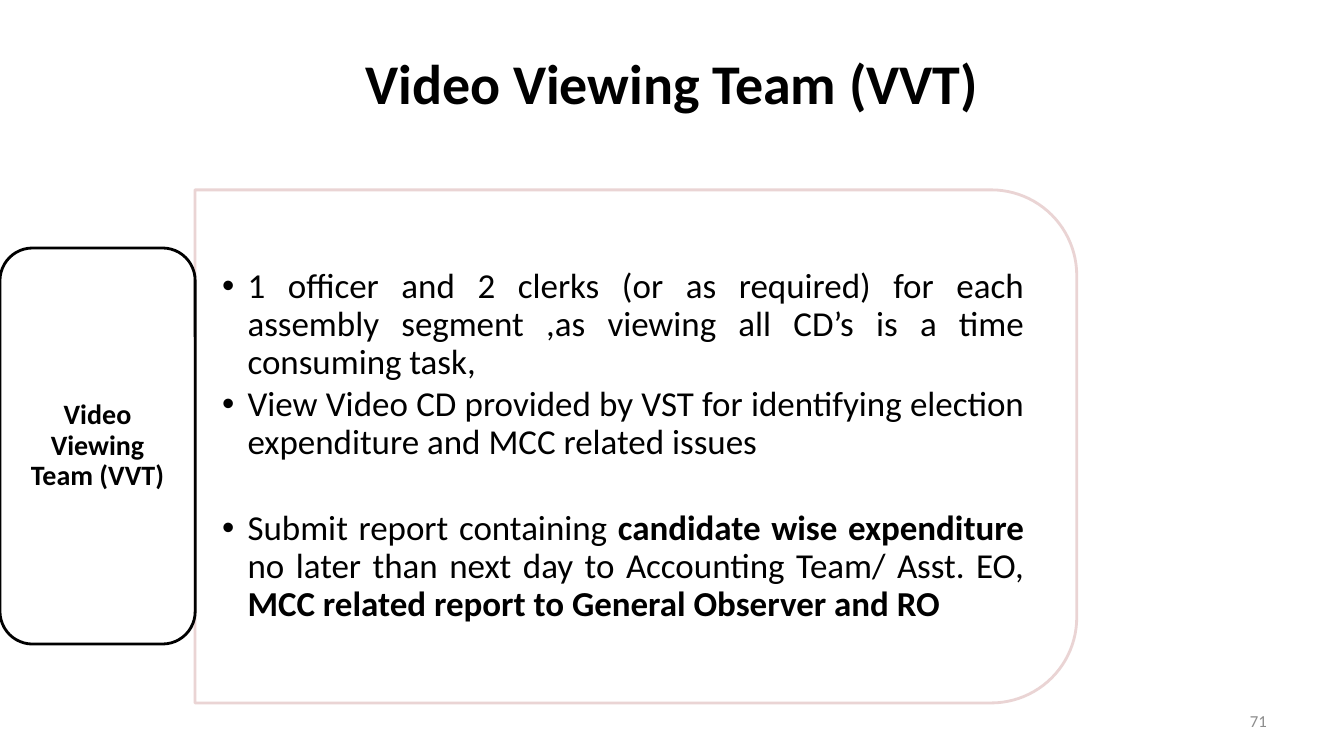
from dataclasses import dataclass, field

from lxml.etree import SubElement as Sub
from pptx import Presentation as Deck
from pptx.dml.color import RGBColor as Rgb
from pptx.enum.shapes import MSO_SHAPE as Kind
from pptx.enum.text import MSO_ANCHOR as Anchor, PP_ALIGN as Align
from pptx.oxml.ns import qn
from pptx.util import Cm, Pt


@dataclass(frozen=True)
class Theme:
    face: str = "Calibri"
    ink: str = "000000"
    pale: str = "E8D0D0"
    gray: str = "8C8C8C"
    paper: str = "FFFFFF"
    head: int = 40
    body: int = 25
    side: int = 20
    foot: int = 12
    line: int = 2


THEME = Theme()
INDENT = Cm(0.64)


@dataclass(frozen=True)
class Box:
    """Place in centimetres."""
    left: float
    top: float
    wide: float
    high: float

    def spot(self) -> list:
        return [Cm(n) for n in (self.left, self.top, self.wide, self.high)]


@dataclass(frozen=True)
class Style:
    size: int
    align: Align
    color: str = THEME.ink
    bold: bool = False
    pad: tuple = (0.25, 0.13)
    lead: float = 1.0
    dots: bool = False


@dataclass(frozen=True)
class Para:
    """Runs split by '*', every second one bold; after is the gap in points."""
    text: str
    after: float = 0


@dataclass(frozen=True)
class Block:
    box: Box
    style: Style
    paras: list = field(default_factory=list)


@dataclass(frozen=True)
class Panel:
    kind: Kind
    box: Box
    line: str = ""
    fill: str = ""
    turn: int = 0
    alpha: int = 100


BAND = Panel(Kind.RECTANGLE, Box(0, 1.02, 33.87, 2.08), fill=THEME.paper)
FRAME = Panel(Kind.ROUND_2_SAME_RECTANGLE, Box(9.56, 0.14, 12.93, 22.22),
              THEME.pale, turn=90, alpha=90)
TAB = Panel(Kind.ROUNDED_RECTANGLE, Box(0, 6.25, 4.92, 9.98), THEME.ink)
TITLE = Style(THEME.head, Align.CENTER, bold=True)
LABEL = Style(THEME.side, Align.CENTER, bold=True, pad=(0.2, 0.1), lead=0.9)
NAME = Para("Video Viewing Team (VVT)")

BLOCKS = [
    Block(Box(4.91, 5.41, 21.59, 11.66),
          Style(THEME.body, Align.JUSTIFY, pad=(0.69, 0.36), lead=0.9, dots=True),
          [Para("1 officer and 2 clerks (or as required) for each assembly "
                "segment ,as viewing all CD’s is a time consuming task,", 3.5),
           Para("View Video CD provided by VST for identifying election "
                "expenditure and MCC related issues", 34.5),
           Para("Submit report containing *candidate wise expenditure *no later "
                "than next day to Accounting Team/ Asst. EO, *MCC related report "
                "to General Observer and RO", 3.5)]),
    Block(Box(24.28, 17.65, 7.9, 1.02),
          Style(THEME.foot, Align.RIGHT, color=THEME.gray), [Para("71")]),
]


def apply(item, values: dict) -> None:
    for name, value in values.items():
        setattr(item, name, value)


def add_dot(para) -> None:
    props = para._p.get_or_add_pPr()
    props.set("marL", str(INDENT))
    props.set("indent", str(-INDENT))
    Sub(props, qn("a:buFont")).set("typeface", "Arial")
    Sub(props, qn("a:buChar")).set("char", "•")


def write(shape, style: Style, paras: list) -> None:
    frame = shape.text_frame
    side, edge = map(Cm, style.pad)
    apply(frame, dict(word_wrap=True, vertical_anchor=Anchor.MIDDLE,
                      margin_left=side, margin_right=side,
                      margin_top=edge, margin_bottom=edge))
    for at, item in enumerate(paras):
        para = frame.add_paragraph() if at else frame.paragraphs[0]
        apply(para, dict(alignment=style.align, line_spacing=style.lead,
                         space_before=Pt(0), space_after=Pt(item.after)))
        if style.dots:
            add_dot(para)
        for part, text in enumerate(item.text.split("*")):
            run = para.add_run()
            run.text = text
            apply(run.font, dict(name=THEME.face, size=Pt(style.size),
                                 bold=style.bold or part % 2 == 1))
            run.font.color.rgb = Rgb.from_string(style.color)


def paint(fill, color: str) -> None:
    if color:
        fill.solid()
        fill.fore_color.rgb = Rgb.from_string(color)
    else:
        fill.background()


def draw(slide, panel: Panel):
    shape = slide.shapes.add_shape(panel.kind, *panel.box.spot())
    shape.rotation = panel.turn
    shape.shadow.inherit = False
    shape.line.width = Pt(THEME.line)
    paint(shape.fill, panel.fill)
    paint(shape.line.fill, panel.line)
    if panel.alpha < 100:
        tint = shape.line._ln.find(".//" + qn("a:srgbClr"))
        Sub(tint, qn("a:alpha")).set("val", str(panel.alpha * 1000))
    return shape


def main() -> None:
    deck = Deck()
    apply(deck, dict(slide_width=Cm(33.87), slide_height=Cm(19.05)))
    slide = deck.slides.add_slide(deck.slide_layouts[6])
    write(draw(slide, BAND), TITLE, [NAME])
    draw(slide, FRAME)
    write(draw(slide, TAB), LABEL, [NAME])
    for block in BLOCKS:
        area = slide.shapes.add_textbox(*block.box.spot())
        write(area, block.style, block.paras)
    deck.save("out.pptx")


if __name__ == "__main__":
    main()
